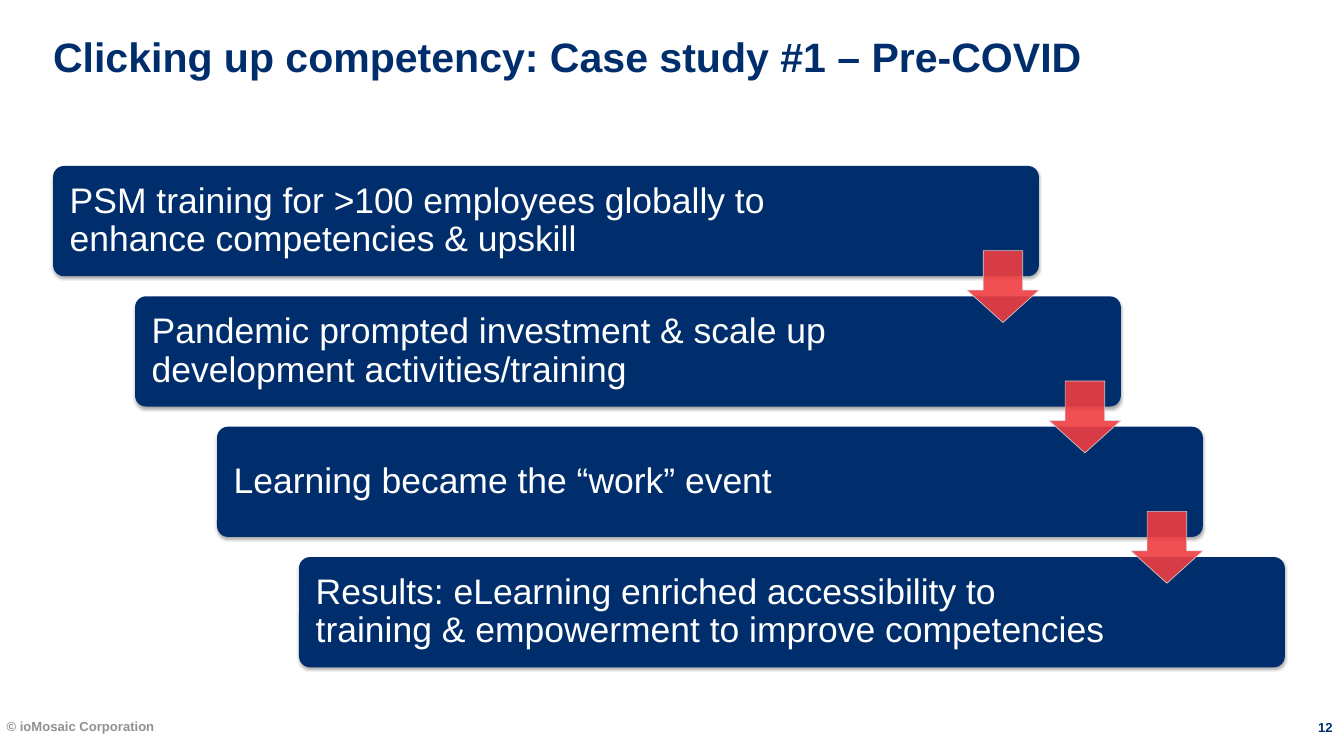
from lxml.etree import SubElement
from pptx import Presentation
from pptx.dml.color import RGBColor
from pptx.enum.shapes import MSO_SHAPE
from pptx.enum.text import MSO_ANCHOR, MSO_AUTO_SIZE, PP_ALIGN
from pptx.oxml.ns import qn
from pptx.util import Inches, Pt

NAVY = RGBColor(0x00, 0x2E, 0x6D)
RED = RGBColor(0xEF, 0x3E, 0x42)
GRAY = RGBColor(0x91, 0x91, 0x95)
SILVER = RGBColor(0xD8, 0xD9, 0xDA)
WHITE = RGBColor(0xFF, 0xFF, 0xFF)

STEPS = [
    "PSM training for >100 employees globally to enhance competencies & upskill",
    "Pandemic prompted investment & scale up development activities/training",
    "Learning became the “work” event",
    "Results: eLearning enriched accessibility to training & empowerment to improve competencies",
]
CARD_LEFT, CARD_TOP = 0.79, 2.47
CARD_WIDTH, CARD_HEIGHT = 14.67, 1.64
STEP_RIGHT, STEP_DOWN = 1.22, 1.94
ARROW_SIZE = 1.07


def write_text(shape, text, size, color, bold=False, align=PP_ALIGN.LEFT,
               anchor=MSO_ANCHOR.TOP, margins=(0, 0, 0, 0)):
    """Put one formatted paragraph in a shape, with left, top, right, bottom margins."""
    frame = shape.text_frame
    frame.auto_size = MSO_AUTO_SIZE.NONE
    frame.word_wrap = True
    frame.vertical_anchor = anchor
    frame.margin_left, frame.margin_top, frame.margin_right, frame.margin_bottom = map(Inches, margins)
    frame.text = text
    paragraph = frame.paragraphs[0]
    paragraph.alignment = align
    paragraph.font.name = "Arial"
    paragraph.font.size = Pt(size)
    paragraph.font.bold = bold
    paragraph.font.color.rgb = color
    return paragraph


def set_title(slide, text):
    """Place and format the title placeholder."""
    title = slide.shapes.title
    title.left, title.top, title.width, title.height = map(Inches, (0.79, 0.47, 18.34, 1.51))
    write_text(title, text, 44, NAVY, bold=True, margins=(0, 0, 0.1, 0))


def add_label(slide, box, text, color, **options):
    """Add a small bold footer text."""
    label = slide.shapes.add_textbox(*map(Inches, box))
    write_text(label, text, 14, color, bold=True, **options)


def add_shadow(shape):
    """Give a shape a soft shadow straight below it."""
    shape.shadow.inherit = False
    effects = shape._element.spPr.find(qn("a:effectLst"))
    shadow = SubElement(effects, qn("a:outerShdw"), blurRad=str(Pt(3.1)),
                        dist=str(Pt(1.8)), dir="5400000", rotWithShape="0")
    color = SubElement(shadow, qn("a:srgbClr"), val="000000")
    SubElement(color, qn("a:alpha"), val="35000")


def add_card(slide, left, top, text):
    """Add one rounded step card with its text."""
    card = slide.shapes.add_shape(MSO_SHAPE.ROUNDED_RECTANGLE, Inches(left), Inches(top),
                                  Inches(CARD_WIDTH), Inches(CARD_HEIGHT))
    card.adjustments[0] = 0.1
    card.fill.solid()
    card.fill.fore_color.rgb = NAVY
    card.line.fill.background()
    add_shadow(card)
    paragraph = write_text(card, text, 38, WHITE, anchor=MSO_ANCHOR.MIDDLE,
                           margins=(0.2, 0.16, 2.5, 0.16))
    paragraph.line_spacing = 0.9


def add_arrow(slide, left, top):
    """Add a translucent down arrow leading to the next card."""
    arrow = slide.shapes.add_shape(MSO_SHAPE.DOWN_ARROW, Inches(left), Inches(top),
                                   Inches(ARROW_SIZE), Inches(ARROW_SIZE))
    arrow.shadow.inherit = False
    arrow.adjustments[0] = 0.45
    arrow.adjustments[1] = 0.55
    arrow.adjustments[0], arrow.adjustments[1] = 0.55, 0.45
    arrow.fill.solid()
    arrow.fill.fore_color.rgb = RED
    arrow.line.color.rgb = SILVER
    arrow.line.width = Pt(0.75)
    for color in arrow._element.spPr.iter(qn("a:srgbClr")):
        SubElement(color, qn("a:alpha"), val="90000")


def main():
    """Build the slide and save it."""
    presentation = Presentation()
    presentation.slide_width, presentation.slide_height = Inches(20), Inches(11.25)
    slide = presentation.slides.add_slide(presentation.slide_layouts[5])
    set_title(slide, "Clicking up competency: Case study #1 – Pre-COVID")
    add_label(slide, (0, 10.64, 13.34, 0.6), "© ioMosaic Corporation", GRAY,
              margins=(0.1, 0.05, 0.1, 0.05))
    add_label(slide, (19.45, 10.7, 0.55, 0.45), "12", NAVY, align=PP_ALIGN.CENTER)
    corners = [(CARD_LEFT + i * STEP_RIGHT, CARD_TOP + i * STEP_DOWN) for i in range(len(STEPS))]
    for (left, top), text in zip(corners, STEPS):
        add_card(slide, left, top, text)
    for left, top in corners[:-1]:
        add_arrow(slide, left + CARD_WIDTH - ARROW_SIZE, top + 1.26)
    presentation.save("out.pptx")


if __name__ == "__main__":
    main()
